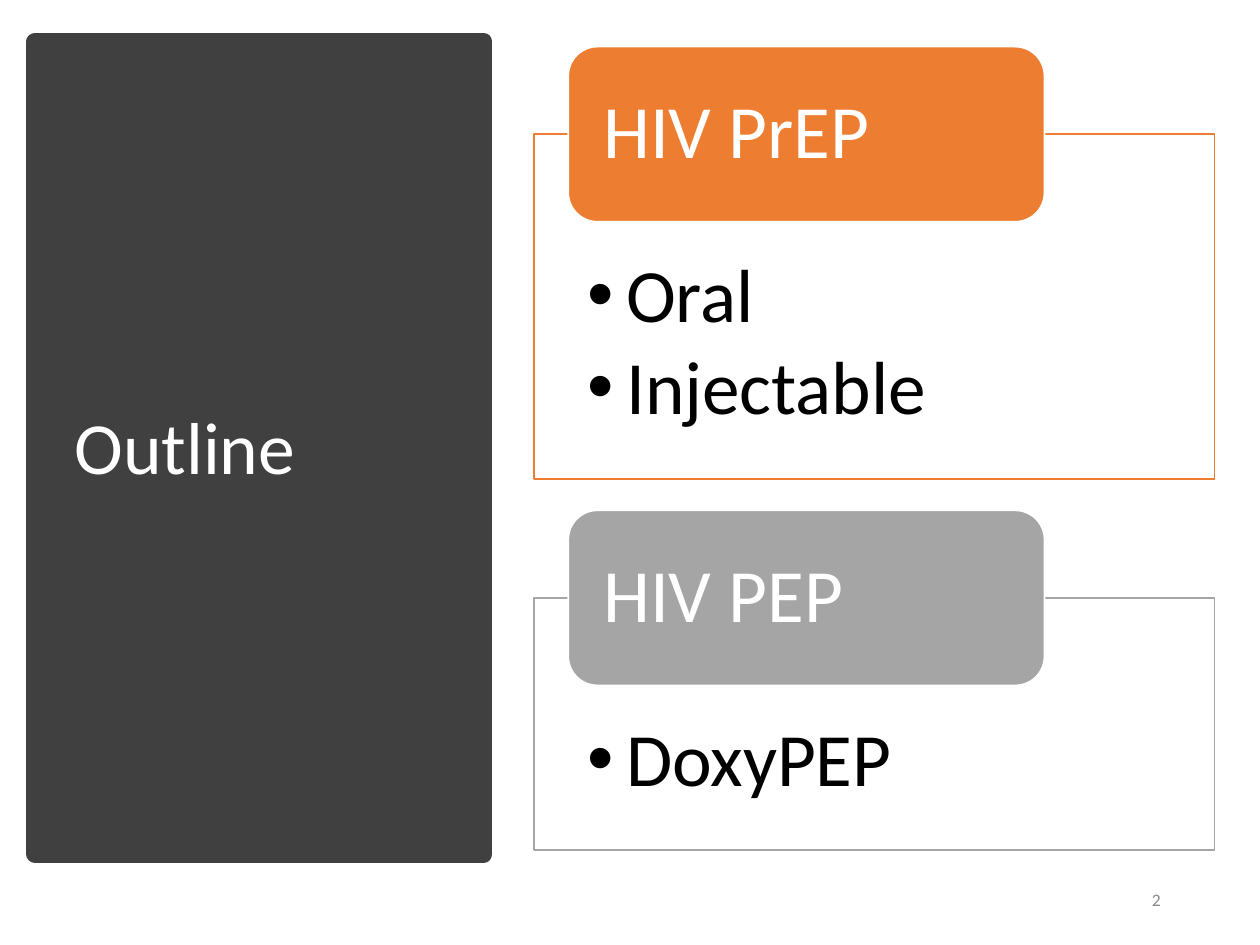
from lxml import etree
from pptx import Presentation
from pptx.dml.color import RGBColor
from pptx.enum.shapes import MSO_SHAPE as SHAPE
from pptx.enum.text import MSO_ANCHOR as ANCHOR, PP_ALIGN as ALIGN
from pptx.oxml.ns import qn
from pptx.util import Inches, Pt

FONT = "Calibri"
WHITE, BLACK, DARK = "FFFFFF", "000000", "404040"
ORANGE, GRAY, NUMBER_GRAY = "ED7D31", "A5A5A5", "898989"
SECTIONS = [
    # top, frame height, color, heading, bullets
    (0.37, 2.74, ORANGE, "HIV PrEP", ["Oral", "Injectable"]),
    (4.05, 2, GRAY, "HIV PEP", ["DoxyPEP"]),
]


def rgb(color):
    return RGBColor.from_string(color)


def add_box(s, kind, box, fill, line, width=1):
    sp = s.shapes.add_shape(kind, *map(Inches, box))
    sp.shadow.inherit = False
    sp.fill.solid()
    sp.fill.fore_color.rgb = rgb(fill)
    sp.line.color.rgb = rgb(line)
    sp.line.width = Pt(width)
    return sp


def add_bullet(p, indent):
    pPr = p._p.get_or_add_pPr()
    pPr.set("marL", str(Inches(indent)))
    pPr.set("indent", str(-Inches(indent)))
    etree.SubElement(pPr, qn("a:buFont"), typeface="Arial")
    etree.SubElement(pPr, qn("a:buChar"), char="•")


def write(sp, lines, size, color, insets=(0.1, 0.05, 0.1, 0.05),
          anchor=ANCHOR.MIDDLE, align=ALIGN.LEFT, bullets=False):
    tf = sp.text_frame
    tf.word_wrap = True
    tf.vertical_anchor = anchor
    for side, inset in zip(("left", "top", "right", "bottom"), insets):
        setattr(tf, f"margin_{side}", Inches(inset))
    tf.text = "\n".join(lines)
    for p in tf.paragraphs:
        formats = {"alignment": align, "line_spacing": 0.9,
                   "space_before": Pt(0), "space_after": Pt(6 if bullets else 0)}
        for name, value in formats.items():
            setattr(p, name, value)
        if bullets:
            add_bullet(p, 0.31)
        font = p.runs[0].font
        font.name, font.size = FONT, Pt(size)
        font.color.rgb = rgb(color)


def add_title_panel(s, left, top, width, height):
    panel = add_box(s, SHAPE.RECTANGLE, (left, top, width, height), DARK, DARK, 10)
    title = s.shapes.title
    title.element.addprevious(panel.element)  # panel goes behind the title
    title.left, title.top = Inches(left + 0.21), Inches(top + 0.37)
    title.width, title.height = Inches(3.12), Inches(5.75)
    write(title, ["Outline"], 42, WHITE)


def add_section(s, left, top, width, frame_height, color, heading, bullets):
    """Framed bullet list with a heading tab centered on its top edge."""
    tab_height = 1.39
    frame = add_box(s, SHAPE.RECTANGLE,
                    (left, top + tab_height / 2, width, frame_height), WHITE, color)
    write(frame, bullets, 43, BLACK, (0.42, 0.98, 0.42, 0.33), ANCHOR.TOP, bullets=True)
    tab = add_box(s, SHAPE.ROUNDED_RECTANGLE,
                  (left + width * 0.05, top, width * 0.7, tab_height), color, WHITE)
    write(tab, [heading], 43, WHITE, (0.21, 0.07, 0.21, 0.07))


def add_page_number(s, left, top, width, height):
    box = s.shapes.add_textbox(*map(Inches, (left, top, width, height)))
    write(box, ["2"], 10, NUMBER_GRAY, align=ALIGN.RIGHT)


def main():
    prs = Presentation()
    prs.slide_width, prs.slide_height = Inches(10), Inches(7.5)
    s = prs.slides.add_slide(prs.slide_layouts[5])
    add_title_panel(s, 0.28, 0.33, 3.56, 6.45)
    add_page_number(s, 7.06, 6.95, 2.25, 0.4)
    for top, *section in SECTIONS:
        add_section(s, 4.24, top, 5.4, *section)
    prs.save("out.pptx")


if __name__ == "__main__":
    main()
